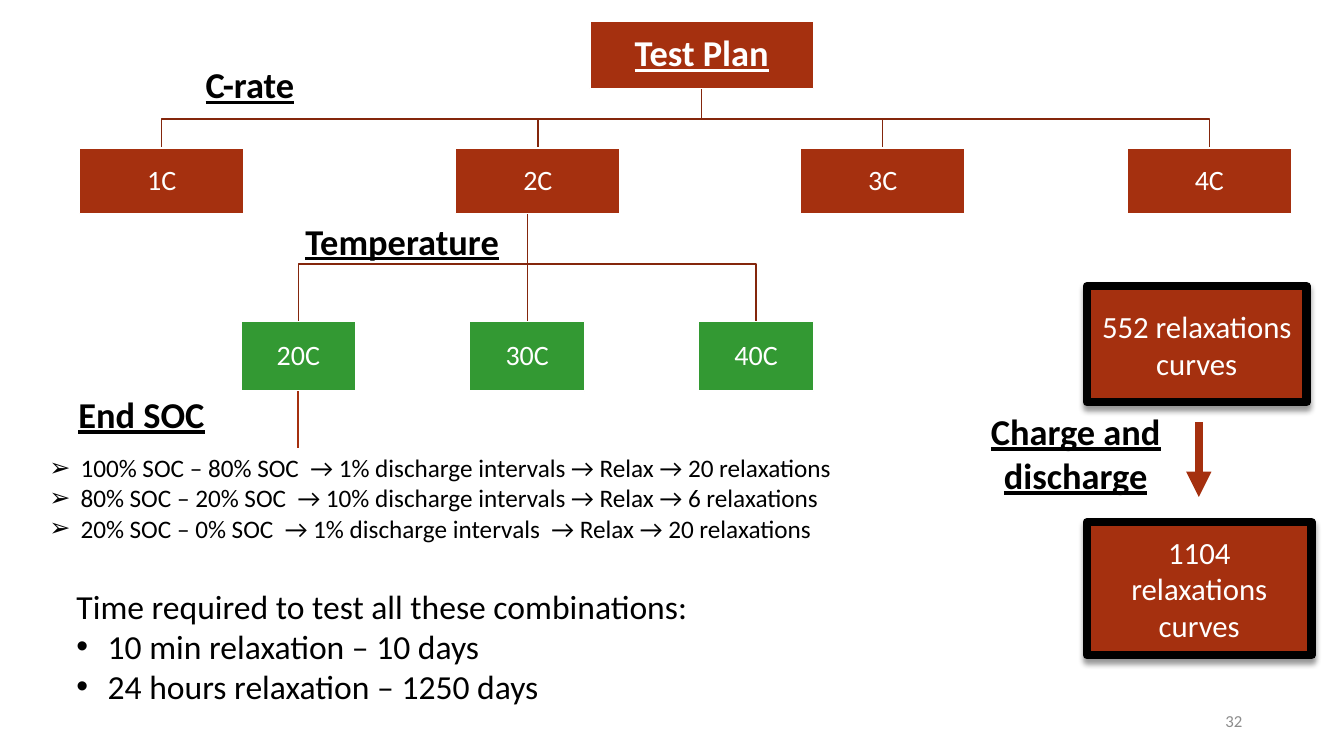
from pptx import Presentation
from pptx.dml.color import RGBColor
from pptx.enum import shapes, text
from pptx.oxml import parse_xml
from pptx.oxml.ns import nsdecls, qn
from pptx.util import Inches, Pt

FONT = "Calibri"
RUST = RGBColor(0xA5, 0x30, 0x0F)
DARK_RUST = RGBColor(0x84, 0x26, 0x0C)
GREEN = RGBColor(0x33, 0x99, 0x33)
GRAY = RGBColor(0x8C, 0x8C, 0x8C)
BLACK = RGBColor(0, 0, 0)
WHITE = RGBColor(255, 255, 255)
HEADING = dict(size=26, bold=True, underline=True)


def write(shape, lines, size=20, color=BLACK, bold=False, underline=False,
          align=None, anchor=None, spacing=None, margin=None, bullets=None):
    """Fill a shape with lines; bullets holds one character or None per line."""
    frame = shape.text_frame
    frame.word_wrap = True
    if anchor is not None:
        frame.vertical_anchor = anchor
    if margin is not None:
        frame.margin_left = frame.margin_right = Inches(margin)
        frame.margin_top = frame.margin_bottom = Inches(margin)
    for index, line in enumerate(lines):
        paragraph = frame.paragraphs[0] if index == 0 else frame.add_paragraph()
        paragraph.alignment = align
        if spacing:
            paragraph.line_spacing = spacing
        if bullets and bullets[index]:
            properties = paragraph._p.get_or_add_pPr()
            properties.set("marL", str(Inches(0.31)))
            properties.set("indent", str(Inches(-0.31)))
            properties.append(parse_xml(
                f'<a:buFont {nsdecls("a")} typeface="Arial"/>'))
            properties.append(parse_xml(
                f'<a:buChar {nsdecls("a")} char="{bullets[index]}"/>'))
        run = paragraph.add_run()
        run.text = line
        run.font.name = FONT
        run.font.size = Pt(size)
        run.font.color.rgb = color
        run.font.bold = bold
        run.font.underline = underline


def add_text(slide, box, lines, **style):
    shape = slide.shapes.add_textbox(*map(Inches, box))
    write(shape, lines, **style)
    return shape


def add_box(slide, box, label, fill, line=WHITE, line_width=1, **style):
    shape = slide.shapes.add_shape(shapes.MSO_SHAPE.RECTANGLE, *map(Inches, box))
    shape.shadow.inherit = False
    shape.fill.solid()
    shape.fill.fore_color.rgb = fill
    shape.line.color.rgb = line
    shape.line.width = Pt(line_width)
    write(shape, [label], color=WHITE, align=text.PP_ALIGN.CENTER,
          anchor=text.MSO_ANCHOR.MIDDLE, **style)
    return shape


def add_line(slide, start, end, color, width):
    line = slide.shapes.add_connector(shapes.MSO_CONNECTOR.STRAIGHT,
                                      *map(Inches, start + end))
    line.line.color.rgb = color
    line.line.width = Pt(width)
    line._element.spPr.append(parse_xml(f'<a:effectLst {nsdecls("a")}/>'))
    return line


def add_elbow(slide, start, end, bend):
    points = [(start[0], bend), (end[0], bend), end]
    builder = slide.shapes.build_freeform(*map(Inches, start), scale=1.0)
    builder.add_line_segments([tuple(map(Inches, point)) for point in points],
                              close=False)
    shape = builder.convert_to_shape()
    shape.shadow.inherit = False
    shape.fill.background()
    shape.line.color.rgb = DARK_RUST
    shape.line.width = Pt(1)


def add_branches(slide, box, root, bend, child_width, child_height, children, fill):
    """Draw a tree level: lines from root to children along the box's bottom."""
    left, top, width, height = box
    child_top = top + height - child_height
    placed = [(label, left + offset) for label, offset in children]
    straight = {}
    for label, child_left in placed:
        end = (child_left + child_width / 2, child_top)
        if abs(end[0] - root) < 0.01:
            straight[label] = add_line(slide, (root, top), end, DARK_RUST, 1)
        else:
            add_elbow(slide, (root, top), end, top + bend)
    boxes = {}
    for label, child_left in placed:
        boxes[label] = add_box(
            slide, (child_left, child_top, child_width, child_height),
            label, fill, spacing=0.9, margin=0.01)
        if label in straight:
            straight[label].end_connect(boxes[label], 0)
    return boxes


def add_test_tree(slide, box):
    left, top, width, height = box
    # Temperature level
    step = 2.27
    temperatures = add_branches(
        slide, (left + 1.6, top + 1.91, 5.69, 1.76), left + 4.44, 0.5, 1.14, 0.69,
        [(f"{20 + 10 * i}C", step * i) for i in range(3)], GREEN)
    # C-rate level
    add_branches(
        slide, (left, top + 0.67, width, 1.24), left + 6.17, 0.3, 1.63, 0.65,
        [("1C", 0), ("2C", 3.73), ("3C", 7.15), ("4C", 10.39)], RUST)
    add_box(slide, (left + 5.06, top, 2.22, 0.67), "Test Plan", RUST,
            spacing=0.9, margin=0.02, **HEADING)
    # Link down to the state-of-charge steps
    link = add_line(slide, (left + 2.17, top + 3.67), (left + 2.17, top + 4.23),
                    RUST, 1.5)
    link.begin_connect(temperatures["20C"], 2)
    # Level headings
    for label, x, y, label_width in (("C-rate", 1.15, 0.36, 1.26),
                                     ("Temperature", 2.14, 1.91, 2.45),
                                     ("End SOC", -0.11, 3.63, 1.94)):
        add_text(slide, (left + x, top + y, label_width, 0.54), [label], **HEADING)


def add_notes_block(slide, box):
    left, top, width, height = box
    # Discharge steps
    add_text(slide, (left, top, width, 1.01),
             ["100% SOC – 80% SOC  → 1% discharge intervals → Relax → 20 relaxations",
              "80% SOC – 20% SOC  → 10% discharge intervals → Relax → 6 relaxations",
              "20% SOC – 0% SOC  → 1% discharge intervals  → Relax → 20 relaxations"],
             size=18, bullets=["➢"] * 3)
    # Test duration
    add_text(slide, (left + 0.27, top + 1.32, 7.32, 1.31),
             ["Time required to test all these combinations:",
              "10 min relaxation – 10 days",
              "24 hours relaxation – 1250 days"],
             size=24, bullets=[None, "•", "•"])


def add_curve_totals(slide, box):
    left, top, width, height = box
    # Framed totals with a soft shadow
    for label, y, box_width, box_height in (
            ("552 relaxations curves", 0, 2.18, 1.15),
            ("1104 relaxations curves", 2.34, 2.23, 1.32)):
        total = add_box(slide, (left + 1.29, top + y, box_width, box_height), label,
                        RUST, line=BLACK, line_width=6, size=22)
        total._element.spPr.find(qn("a:effectLst")).append(parse_xml(
            f'<a:outerShdw {nsdecls("a")} blurRad="{Pt(4)}" dist="{Pt(3)}" '
            'dir="5400000" rotWithShape="0"><a:srgbClr val="000000">'
            '<a:alpha val="40000"/></a:srgbClr></a:outerShdw>'))
    # Arrow and its caption
    arrow = add_line(slide, (left + 2.4, top + 1.35), (left + 2.4, top + 2.09), RUST, 6)
    arrow.line._get_or_add_ln().append(
        parse_xml(f'<a:tailEnd {nsdecls("a")} type="triangle"/>'))
    add_text(slide, (left, top + 1.17, 2.36, 0.98), ["Charge and discharge"],
             align=text.PP_ALIGN.CENTER, **HEADING)


def main():
    presentation = Presentation()
    presentation.slide_width = Inches(13.33)
    presentation.slide_height = Inches(7.5)
    slide = presentation.slides.add_slide(presentation.slide_layouts[6])
    add_test_tree(slide, (0.79, 0.21, 12.02, 4.23))
    add_notes_block(slide, (0.39, 4.44, 10.22, 2.63))
    add_curve_totals(slide, (9.49, 2.84, 3.52, 3.66))
    # Page number
    add_text(slide, (9.42, 6.95, 3, 0.4), ["32"], size=12, color=GRAY,
             align=text.PP_ALIGN.RIGHT, anchor=text.MSO_ANCHOR.MIDDLE)
    presentation.save("out.pptx")


if __name__ == "__main__":
    main()
